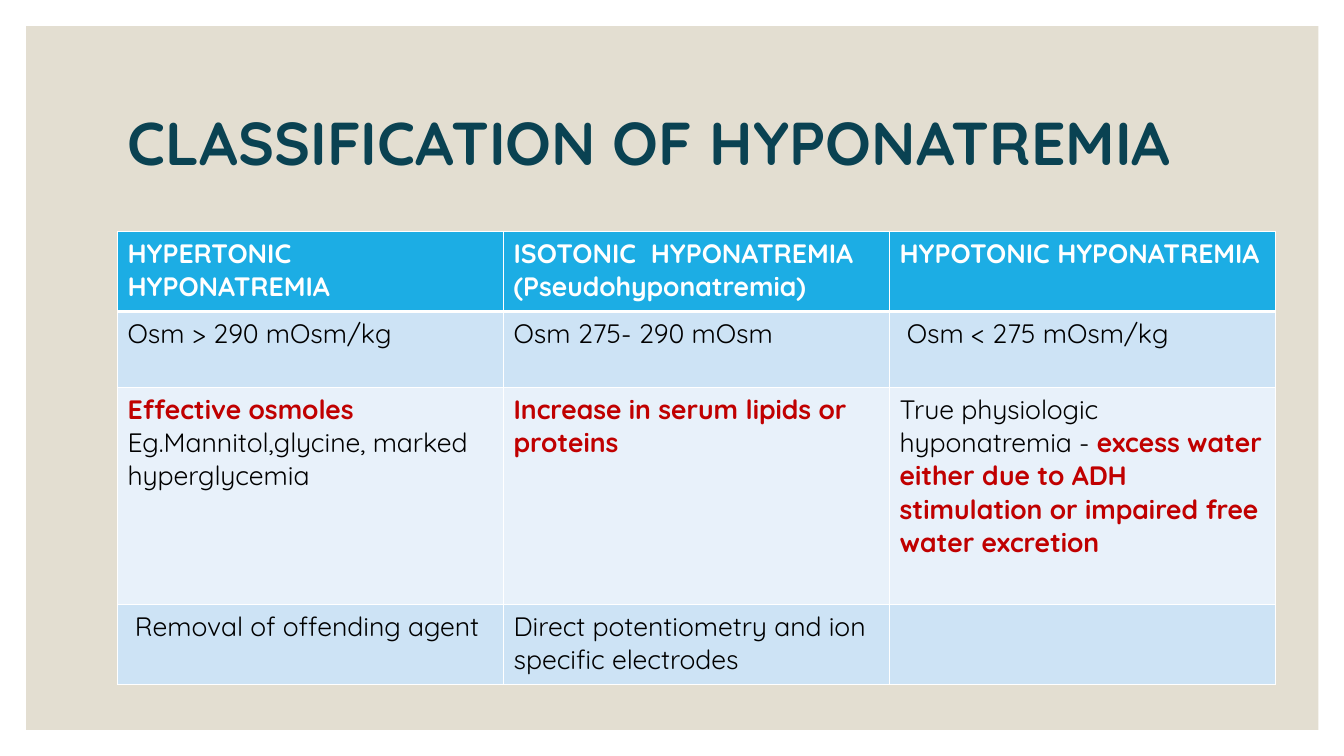
"""Build the slide that classifies hyponatremia in a three-column table."""
from lxml import etree
from pptx import Presentation
from pptx.dml.color import RGBColor
from pptx.enum import shapes, text
from pptx.oxml import ns
from pptx.util import Pt

FONT = "Quicksand"
WHITE, BLACK, RED = "FFFFFF", "000000", "C00000"
ROW_FILLS = ["1CADE4", "CDE3F5", "E8F1FA", "CDE3F5"]
ROW_HEIGHTS = [56.9, 54.5, 155, 56.9]
COLUMN_WIDTH = 275.75

# An asterisk starts the emphasised part of a line.
ROWS = [
    [["HYPERTONIC HYPONATREMIA"],
     ["ISOTONIC  HYPONATREMIA", "(Pseudohyponatremia)"],
     ["HYPOTONIC HYPONATREMIA"]],
    [["Osm > 290 mOsm/kg"], ["Osm 275- 290 mOsm"], [" Osm < 275 mOsm/kg"]],
    [["*Effective osmoles", "Eg.Mannitol,glycine, marked hyperglycemia"],
     ["*Increase in serum lipids or proteins"],
     ["True physiologic hyponatremia - *excess water either due to ADH "
      "stimulation or impaired free water excretion"]],
    [[" Removal of offending agent"],
     ["Direct potentiometry and ion specific electrodes"],
     []],
]


def color(value):
    return RGBColor.from_string(value)


def add_borders(cell, bottom_width):
    properties = cell._tc.get_or_add_tcPr()
    widths = {"lnL": 1, "lnR": 1, "lnT": 1, "lnB": bottom_width}
    for position, (side, width) in enumerate(widths.items()):
        line = etree.Element(ns.qn(f"a:{side}"), w=str(Pt(width)))
        fill = etree.SubElement(line, ns.qn("a:solidFill"))
        etree.SubElement(fill, ns.qn("a:srgbClr"), val=WHITE)
        properties.insert(position, line)


presentation = Presentation()
presentation.slide_width, presentation.slide_height = Pt(960), Pt(540)
slide = presentation.slides.add_slide(presentation.slide_layouts[5])
slide.background.fill.solid()
slide.background.fill.fore_color.rgb = color(WHITE)

title = slide.shapes.title
title.left, title.top, title.width, title.height = Pt(84), Pt(50.4), Pt(792), Pt(108)
title.text_frame.text = "CLASSIFICATION OF HYPONATREMIA"
title.text_frame.auto_size = text.MSO_AUTO_SIZE.NONE
title.text_frame.vertical_anchor = text.MSO_ANCHOR.MIDDLE
paragraph = title.text_frame.paragraphs[0]
paragraph.alignment = text.PP_ALIGN.LEFT
paragraph.line_spacing = 0.9
paragraph.font.name, paragraph.font.size, paragraph.font.bold = FONT, Pt(43.2), True
paragraph.font.color.rgb = color("0A4252")

panel = slide.shapes.add_shape(
    shapes.MSO_SHAPE.RECTANGLE, Pt(18.7), Pt(18.7), Pt(923), Pt(521.3 - 18.7 + 18.7))
panel.height = Pt(502.6)
panel.shadow.inherit = False
panel.fill.solid()
panel.fill.fore_color.rgb = color("E3DED1")
panel.line.fill.background()
title._element.addprevious(panel._element)

table = slide.shapes.add_table(
    len(ROWS), 3, Pt(84), Pt(165.6), Pt(3 * COLUMN_WIDTH), Pt(sum(ROW_HEIGHTS))).table
for column in table.columns:
    column.width = Pt(COLUMN_WIDTH)

for row_index, row in enumerate(ROWS):
    header = row_index == 0
    table.rows[row_index].height = Pt(ROW_HEIGHTS[row_index])
    for column_index, lines in enumerate(row):
        cell = table.cell(row_index, column_index)
        cell.fill.solid()
        cell.fill.fore_color.rgb = color(ROW_FILLS[row_index])
        add_borders(cell, 3 if header else 1)
        for line_index, line in enumerate(lines):
            frame = cell.text_frame
            paragraph = frame.add_paragraph() if line_index else frame.paragraphs[0]
            paragraph.font.name, paragraph.font.size = FONT, Pt(19)
            plain, _, emphasis = line.partition("*")
            styles = [(plain, WHITE if header else BLACK, header), (emphasis, RED, True)]
            for words, ink, bold in styles:
                if words:
                    run = paragraph.add_run()
                    run.text = words
                    run.font.bold = bold
                    run.font.color.rgb = color(ink)
                    run.font.name, run.font.size = FONT, Pt(19)

presentation.save("out.pptx")
